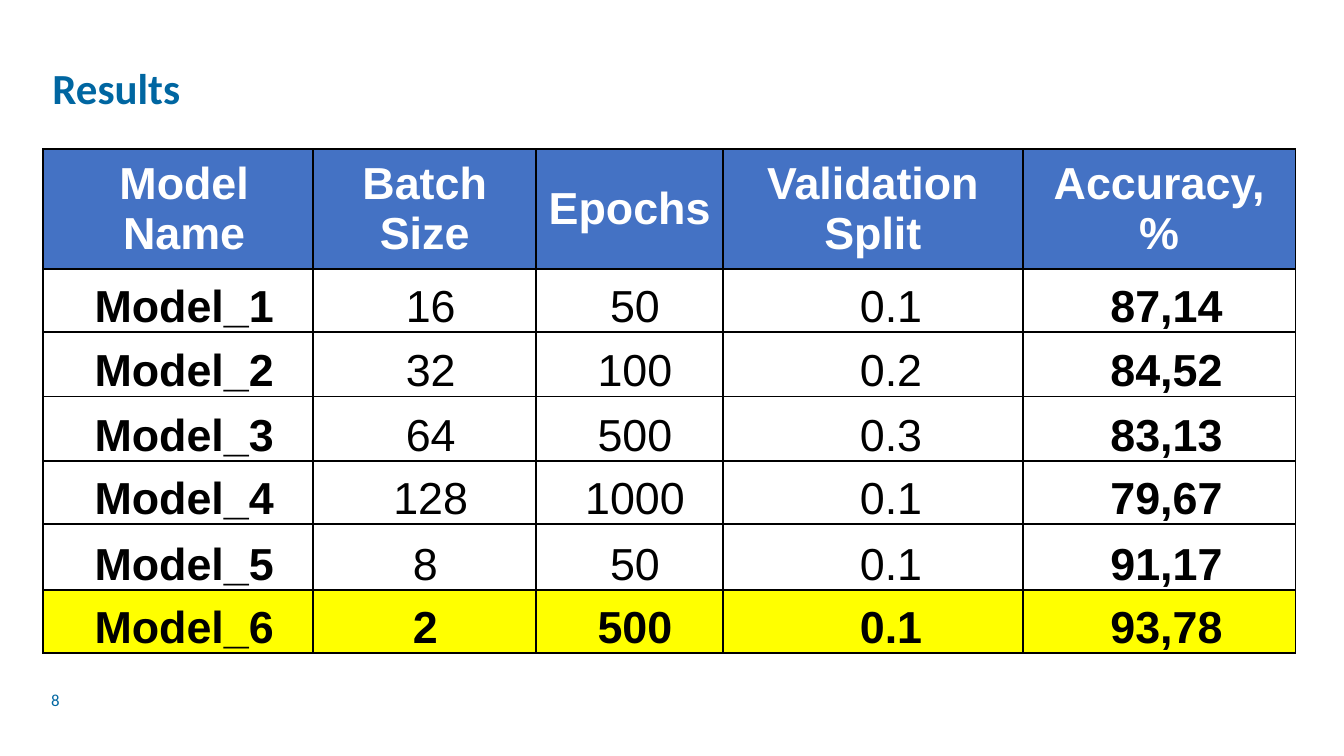
from lxml import etree
from pptx import Presentation
from pptx.dml.color import RGBColor
from pptx.enum.text import MSO_ANCHOR, PP_ALIGN
from pptx.oxml.ns import qn
from pptx.util import Inches, Pt

TOP, MIDDLE, BOTTOM = MSO_ANCHOR.TOP, MSO_ANCHOR.MIDDLE, MSO_ANCHOR.BOTTOM
LEFT, CENTER = PP_ALIGN.LEFT, PP_ALIGN.CENTER
BLUE, HEADER_BLUE, YELLOW = "0066A1", "4472C4", "FFFF00"
BLACK, WHITE = "000000", "FFFFFF"


def color(value):
    return RGBColor.from_string(value)


def write(frame, text, *, size, font, ink, bold=False, align=LEFT, indent=0,
          spacing=None, before=0):
    """Fill a text frame, one paragraph per line of text."""
    for number, line in enumerate(text.split("\n")):
        para = frame.paragraphs[0] if number == 0 else frame.add_paragraph()
        properties = para._p.get_or_add_pPr()
        properties.set("marL", str(Inches(indent)))
        properties.set("indent", "0")
        para.alignment = align
        para.space_before = Pt(before)
        if spacing:
            para.line_spacing = spacing
        span = para.add_run()
        span.text = line
        span.font.name = font
        span.font.size = Pt(size)
        span.font.bold = bold
        span.font.color.rgb = color(ink)


# A 16:9 page
deck = Presentation()
deck.slide_width = Inches(10)
deck.slide_height = Inches(10) * 9 // 16
page = deck.slides.add_slide(deck.slide_layouts[5])

# Title and page number
title = page.shapes.title
title.left, title.top = Inches(0.32), Inches(0.46)
title.width, title.height = Inches(9.33), Inches(0.43)
number_box = page.shapes.add_textbox(Inches(0.31), Inches(5.06), Inches(1.69), Inches(0.3))
for box, anchor in ((title, TOP), (number_box, MIDDLE)):
    frame = box.text_frame
    frame.word_wrap = True
    frame.vertical_anchor = anchor
    frame.margin_left = frame.margin_right = Inches(0.07)
    frame.margin_top = frame.margin_bottom = Inches(0.04)
write(title.text_frame, "Results", size=23, font="Calibri", ink=BLUE, bold=True, spacing=0.9)
write(number_box.text_frame, "8", size=9, font="Calibri", ink=BLUE)

# Results table
rows = [
    ("Model Name", "Batch Size", "Epochs", "Validation Split", "Accuracy,\n%"),
    ("Model_1", "16", "50", "0.1", "87,14"),
    ("Model_2", "32", "100", "0.2", "84,52"),
    ("Model_3", "64", "500", "0.3", "83,13"),
    ("Model_4", "128", "1000", "0.1", "79,67"),
    ("Model_5", "8", "50", "0.1", "91,17"),
    ("Model_6", "2", "500", "0.1", "93,78"),
]
column_widths = (2.01, 1.66, 1.39, 2.23, 2.03)
row_heights = (0.89, 0.47, 0.48, 0.48, 0.47, 0.49, 0.47)
header_indents = (0.09, 0, 0, 0, 0)
body_indents = (0.09, 0.09, 0.08, 0.27, 0.11)
best_row = len(rows) - 1

table = page.shapes.add_table(len(rows), len(column_widths), Inches(0.32), Inches(1.11),
                              Inches(9.33), Inches(3.74)).table
for column, width in zip(table.columns, column_widths):
    column.width = Inches(width)
for row, height in zip(table.rows, row_heights):
    row.height = Inches(height)

for r, values in enumerate(rows):
    header, best = r == 0, r == best_row
    for c, value in enumerate(values):
        cell = table.cell(r, c)
        cell.margin_left = cell.margin_right = cell.margin_top = cell.margin_bottom = 0
        cell.vertical_anchor = MIDDLE if header else BOTTOM
        indent = header_indents[c] if header else body_indents[c]
        if c == 1 and len(value) == 1:
            indent = 0.01
        write(cell.text_frame, value, size=24, font="Arial", align=CENTER,
              ink=WHITE if header else BLACK,
              bold=header or best or c in (0, len(values) - 1),
              indent=indent, spacing=Pt(9.1) if r == 1 else None,
              before=0.1 if r == 3 else 0)

        # Borders come before the fill in the cell properties
        properties = cell._tc.get_or_add_tcPr()
        for side in ("a:lnL", "a:lnR", "a:lnT", "a:lnB"):
            line = etree.SubElement(properties, qn(side), w=str(Pt(1)))
            fill = etree.SubElement(line, qn("a:solidFill"))
            etree.SubElement(fill, qn("a:srgbClr"), val=BLACK)
        if header or best:
            cell.fill.solid()
            cell.fill.fore_color.rgb = color(HEADER_BLUE if header else YELLOW)
        else:
            cell.fill.background()

deck.save("out.pptx")
